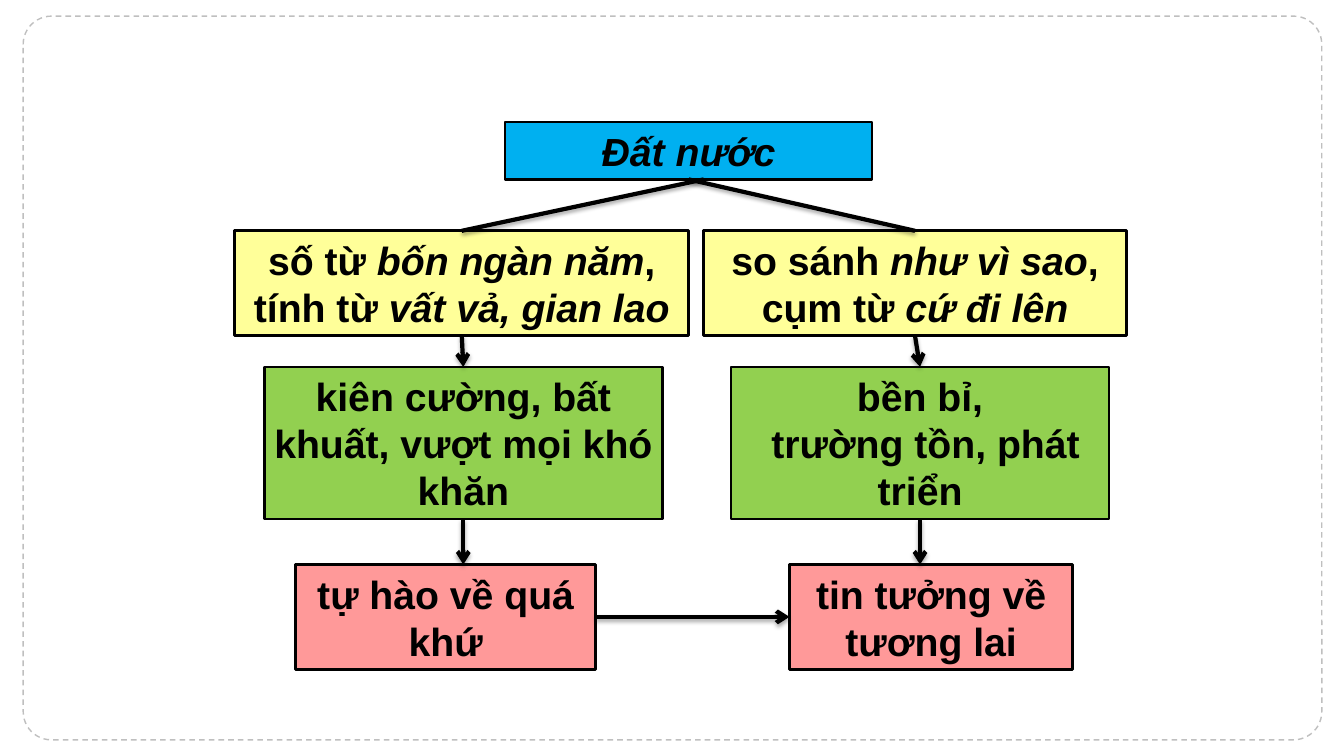
from lxml import etree
from pptx import Presentation
from pptx.dml.color import RGBColor
from pptx.enum.dml import MSO_LINE
from pptx.enum.shapes import MSO_CONNECTOR, MSO_SHAPE
from pptx.enum.text import MSO_ANCHOR, MSO_AUTO_SIZE, PP_ALIGN
from pptx.oxml.ns import qn
from pptx.util import Inches, Pt

TOP, LEFT, BOTTOM, RIGHT = range(4)
BLACK = "000000"
# Top and height of each row, measured from the top of the diagram
ROOT_ROW = (0, 0.57)
BRANCH_ROWS = [(1.08, 1.04), (2.43, 1.51), (4.39, 1.04)]
BRANCH_FILLS = ["FFFF99", "92D050", "FF9999"]


def color(hex_code):
    return RGBColor.from_string(hex_code)


def add_frame(slide, left, top, width, height):
    frame = slide.shapes.add_shape(
        MSO_SHAPE.ROUNDED_RECTANGLE, *map(Inches, (left, top, width, height)))
    frame.adjustments[0] = 0.039
    frame.shadow.inherit = False
    frame.fill.background()
    frame.line.color.rgb = color("BFBFBF")
    frame.line.width = Pt(1)
    frame.line.dash_style = MSO_LINE.DASH


def add_box(slide, left, top, width, height, fill, lines):
    """Add a bordered box; text between asterisks is italic."""
    box = slide.shapes.add_shape(
        MSO_SHAPE.RECTANGLE, *map(Inches, (left, top, width, height)))
    box.shadow.inherit = False
    box.fill.solid()
    box.fill.fore_color.rgb = color(fill)
    box.line.color.rgb = color(BLACK)
    box.line.width = Pt(2)
    frame = box.text_frame
    frame.word_wrap = True
    frame.auto_size = MSO_AUTO_SIZE.SHAPE_TO_FIT_TEXT
    frame.vertical_anchor = MSO_ANCHOR.MIDDLE
    for index, line in enumerate(lines):
        paragraph = frame.add_paragraph() if index else frame.paragraphs[0]
        paragraph.alignment = PP_ALIGN.CENTER
        font = paragraph.font
        font.name, font.size, font.bold = "Arial", Pt(28), True
        font.color.rgb = color(BLACK)
        for part, text in enumerate(line.split("*")):
            if text:
                run = paragraph.add_run()
                run.text = text
                run.font.italic = part % 2 == 1
    return box


def add_line(slide, start, end, arrow=True):
    """Draw a line; each end is a (shape, side) pair or an (x, y) point."""
    line = slide.shapes.add_connector(MSO_CONNECTOR.STRAIGHT, 0, 0, 0, 0)
    if isinstance(start[0], int):
        line.begin_x, line.begin_y = start
    else:
        line.begin_connect(*start)
    if isinstance(end[0], int):
        line.end_x, line.end_y = end
    else:
        line.end_connect(*end)
    line.line.color.rgb = color(BLACK)
    line.line.width = Pt(3)
    properties = line.element.spPr
    if arrow:
        etree.SubElement(properties.find(qn("a:ln")), qn("a:tailEnd"), type="arrow")
    effects = etree.SubElement(properties, qn("a:effectLst"))
    shadow = etree.SubElement(
        effects, qn("a:outerShdw"), blurRad=str(Pt(3.1)), dist=str(Pt(1.8)),
        dir="5400000", rotWithShape="0")
    shade = etree.SubElement(shadow, qn("a:srgbClr"), val=BLACK)
    etree.SubElement(shade, qn("a:alpha"), val="35000")


def add_branch(slide, left, top, spans, texts):
    """Stack three boxes joined by arrows; spans are (offset, width) pairs."""
    boxes = [
        add_box(slide, left + offset, top + row_top, width, height, fill, lines)
        for (offset, width), (row_top, height), fill, lines
        in zip(spans, BRANCH_ROWS, BRANCH_FILLS, texts)]
    device, meaning, feeling = boxes
    add_line(slide, (device, BOTTOM), (meaning, TOP))
    # The last arrow drops straight down from the middle box
    axis = meaning.left + meaning.width // 2
    add_line(slide, (meaning, BOTTOM), (axis, int(feeling.top)))
    return device, feeling


def add_diagram(slide, left, top):
    root_top, root_height = ROOT_ROW
    root = add_box(slide, left + 2.68, top + root_top, 3.64, root_height,
                   "00B0F0", ["*Đất nước*"])
    past_device, past_feeling = add_branch(
        slide, left, top, [(0, 4.5), (0.29, 3.95), (0.6, 2.98)],
        [["số từ *bốn ngàn năm*, tính từ *vất vả, gian lao*"],
         ["kiên cường, bất khuất, vượt mọi khó khăn"],
         ["tự hào về quá khứ"]])
    future_device, future_feeling = add_branch(
        slide, left + 4.65, top, [(0, 4.19), (0.27, 3.75), (0.85, 2.81)],
        [["so sánh *như vì sao*, cụm từ *cứ đi lên*"],
         ["bền bỉ,", " trường tồn, phát triển"],
         ["tin tưởng về tương lai"]])
    fork = (int(Inches(left + 4.65)), int(root.top + root.height))
    add_line(slide, fork, (past_device, TOP), arrow=False)
    add_line(slide, (root, BOTTOM), (future_device, TOP), arrow=False)
    add_line(slide, (past_feeling, RIGHT), (future_feeling, LEFT))


def main():
    presentation = Presentation()
    presentation.slide_width = Inches(13.33)
    presentation.slide_height = Inches(7.5)
    slide = presentation.slides.add_slide(presentation.slide_layouts[6])
    add_frame(slide, 0.23, 0.16, 12.88, 7.18)
    add_diagram(slide, 2.33, 1.21)
    presentation.save("out.pptx")


if __name__ == "__main__":
    main()
